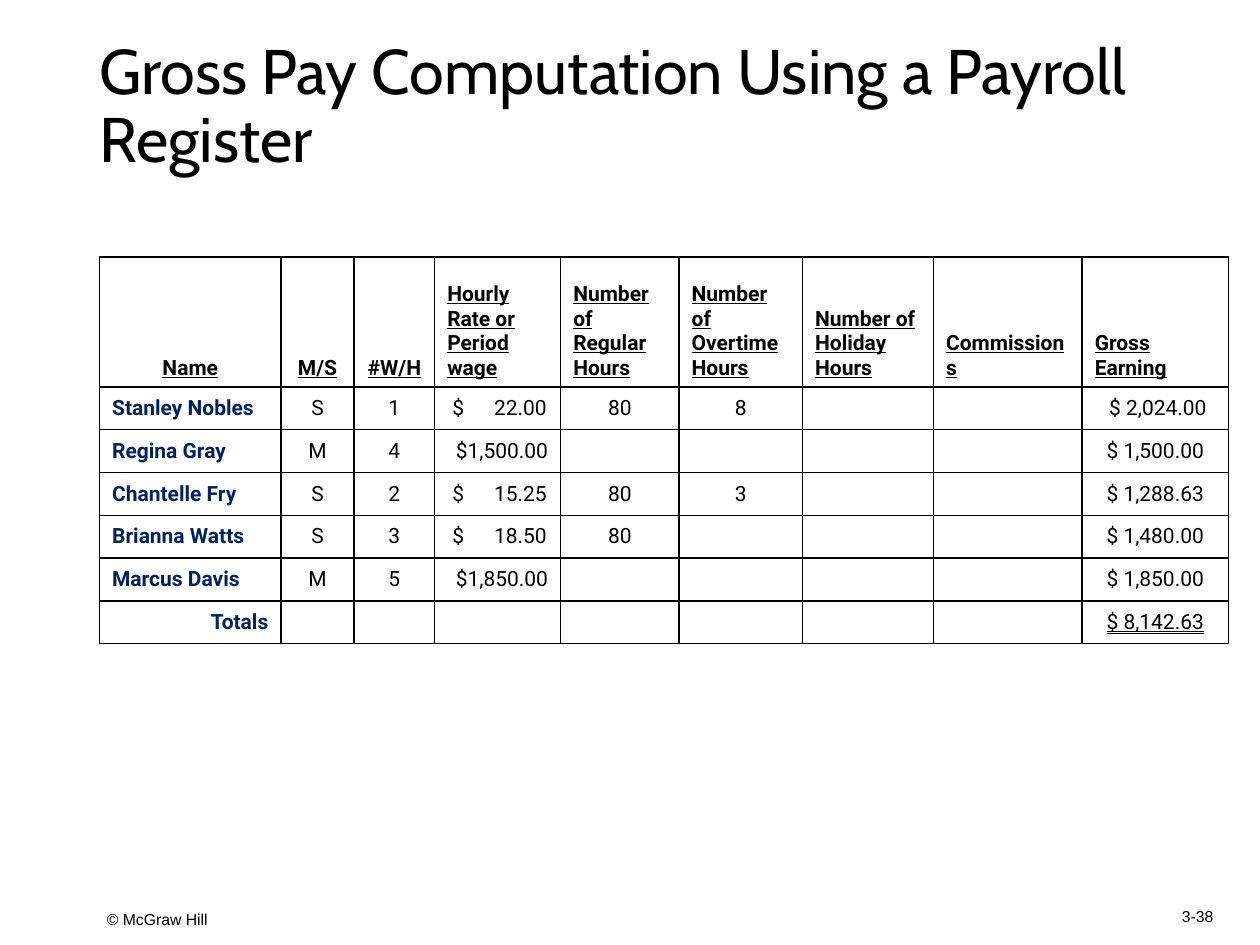
from lxml.etree import SubElement
from pptx import Presentation
from pptx.dml.color import RGBColor
from pptx.enum.text import (MSO_ANCHOR as Anchor, MSO_AUTO_SIZE as AutoSize,
                            MSO_UNDERLINE as Underline, PP_ALIGN as Align)
from pptx.oxml.ns import qn
from pptx.util import Inches, Pt

BLACK = RGBColor(0x00, 0x00, 0x00)
NAVY = RGBColor(0x00, 0x20, 0x60)

COLUMN_WIDTHS = [1.44, 0.58, 0.64, 1, 0.94, 0.98, 1.04, 1.18, 1.16]
HEADER_HEIGHT, ROW_HEIGHT = 1.03, 0.34
RATE_COLUMN, RATE_INSET, RATE_TAB = 3, 0.14, 0.75

HEADERS = ["Name", "M/S", "#W/H", "Hourly Rate or Period wage",
           "Number of Regular Hours", "Number of Overtime\nHours",
           "Number of Holiday\nHours", "Commissions", "Gross Earning"]
EMPLOYEES = [
    ["Stanley Nobles", "S", "1", "$\t22.00", "80", "8", "", "", " $ 2,024.00"],
    ["Regina Gray", "M", "4", "$1,500.00", "", "", "", "", "$ 1,500.00"],
    ["Chantelle Fry", "S", "2", "$\t15.25", "80", "3", "", "", "$ 1,288.63"],
    ["Brianna Watts", "S", "3", "$\t18.50", "80", "", "", "", "$ 1,480.00"],
    ["Marcus Davis", "M", "5", "$1,850.00", "", "", "", "", "$ 1,850.00"],
]
TOTALS = ["Totals"] + [""] * 7 + ["$ 8,142.63"]


def add_run(paragraph, text, font_name, size, color=BLACK, bold=False, underline=False):
    run = paragraph.add_run()
    run.text = text
    font = run.font
    font.name, font.size, font.bold, font.underline = font_name, Pt(size), bold, underline
    font.color.rgb = color


def add_title(slide, text):
    title = slide.shapes.title
    title.left, title.top = Inches(0.69), Inches(0.3)
    title.width, title.height = Inches(8.62), Inches(1.11)
    frame = title.text_frame
    frame.auto_size, frame.vertical_anchor = AutoSize.NONE, Anchor.MIDDLE
    paragraph = frame.paragraphs[0]
    paragraph.alignment, paragraph.line_spacing = Align.LEFT, 0.9
    add_run(paragraph, text, "Cabin", 36)


def add_footer(slide, text, left, top, width, height, alignment):
    box = slide.shapes.add_textbox(*map(Inches, (left, top, width, height)))
    frame = box.text_frame
    frame.word_wrap, frame.vertical_anchor = True, Anchor.MIDDLE
    paragraph = frame.paragraphs[0]
    paragraph.alignment = alignment
    add_run(paragraph, text, "Arial", 9)


def add_borders(cell):
    properties = cell._tc.get_or_add_tcPr()
    for side in ("a:lnL", "a:lnR", "a:lnT", "a:lnB"):
        line = SubElement(properties, qn(side), w=str(Pt(1)))
        fill = SubElement(line, qn("a:solidFill"))
        SubElement(fill, qn("a:srgbClr"), val=str(BLACK))


def add_right_tab(paragraph, position):
    tabs = SubElement(paragraph._p.get_or_add_pPr(), qn("a:tabLst"))
    SubElement(tabs, qn("a:tab"), pos=str(Inches(position)), algn="r")


def fill_cell(cell, text, alignment, anchor=Anchor.MIDDLE, **style):
    """Write one paragraph per line of text; a tab splits "$" from its amount."""
    add_borders(cell)
    cell.fill.background()
    cell.vertical_anchor = anchor
    frame = cell.text_frame
    for index, line in enumerate(text.split("\n")):
        paragraph = frame.add_paragraph() if index else frame.paragraphs[0]
        paragraph.alignment = alignment
        if "\t" in line:
            paragraph.alignment = Align.LEFT
            cell.margin_left = Inches(RATE_INSET)
            add_right_tab(paragraph, RATE_TAB)
        if line:
            add_run(paragraph, line, "Roboto", 12, **style)
        else:
            SubElement(paragraph._p, qn("a:endParaRPr"), sz="1200")


def add_register(slide):
    rows = [HEADERS, *EMPLOYEES, TOTALS]
    heights = [HEADER_HEIGHT] + [ROW_HEIGHT] * (len(rows) - 1)
    frame = slide.shapes.add_table(
        len(rows), len(HEADERS), Inches(0.79), Inches(2.04),
        Inches(sum(COLUMN_WIDTHS)), Inches(sum(heights)))
    table = frame.table
    table.first_row = table.horz_banding = False
    for column, width in zip(table.columns, COLUMN_WIDTHS):
        column.width = Inches(width)
    for row, height in zip(table.rows, heights):
        row.height = Inches(height)

    for column, header in enumerate(HEADERS):
        alignment = Align.CENTER if column < RATE_COLUMN else Align.LEFT
        fill_cell(table.cell(0, column), header, alignment, Anchor.BOTTOM,
                  bold=True, underline=True)
    for row, values in enumerate(rows[1:], 1):
        is_total = values is TOTALS
        fill_cell(table.cell(row, 0), values[0],
                  Align.RIGHT if is_total else Align.LEFT, color=NAVY, bold=True)
        for column, value in enumerate(values[1:], 1):
            alignment = Align.RIGHT if column == RATE_COLUMN else Align.CENTER
            fill_cell(table.cell(row, column), value, alignment,
                      underline=Underline.DOUBLE_LINE if is_total else False)


def main():
    presentation = Presentation()
    presentation.slide_width, presentation.slide_height = Inches(10), Inches(7.5)
    slide = presentation.slides.add_slide(presentation.slide_layouts[5])
    add_footer(slide, "© McGraw Hill", 0.75, 7.14, 8.1, 0.31, Align.LEFT)
    add_footer(slide, "3-38", 9.09, 7.08, 0.83, 0.38, Align.CENTER)
    add_title(slide, "Gross Pay Computation Using a Payroll Register")
    add_register(slide)
    presentation.save("out.pptx")


if __name__ == "__main__":
    main()
